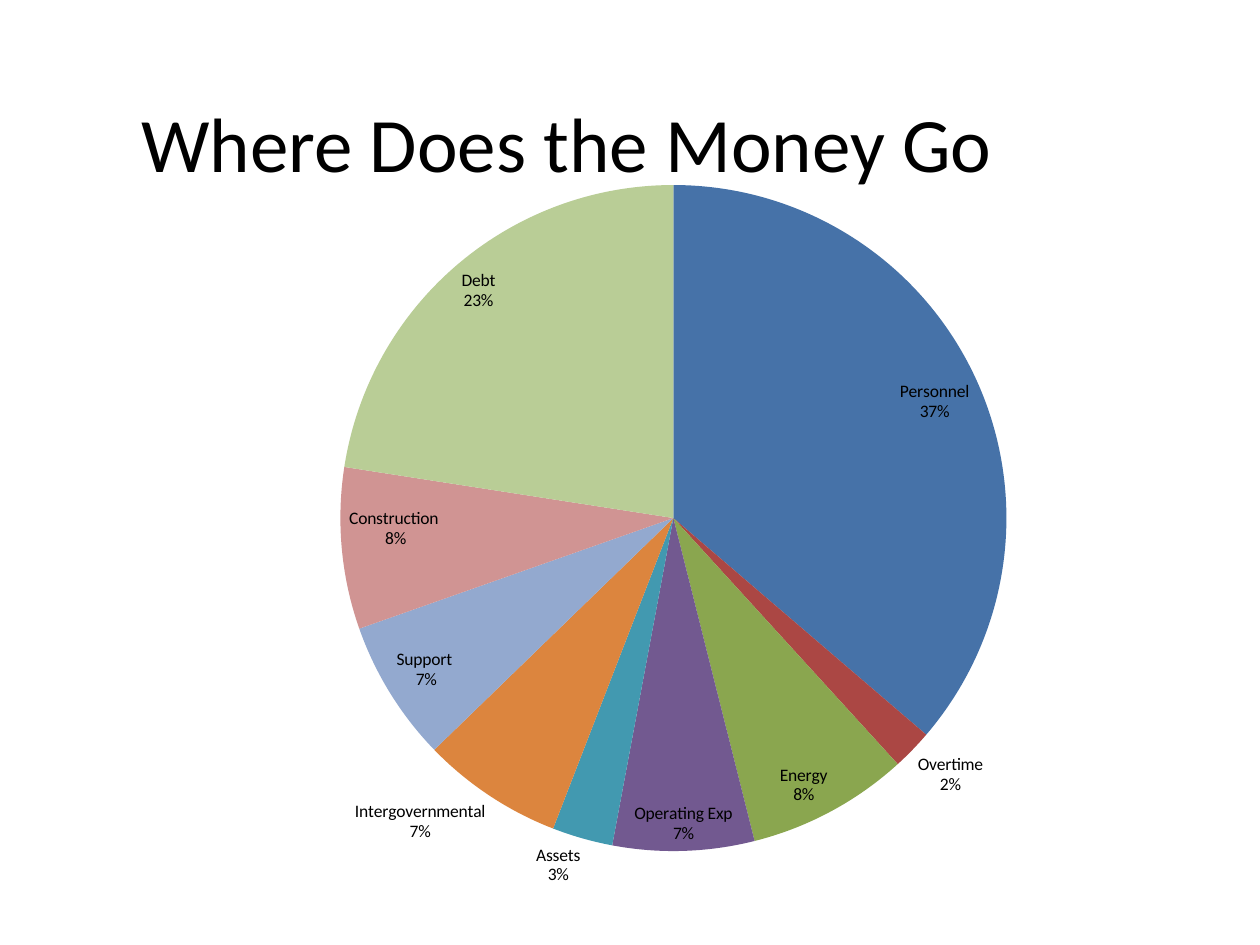
from lxml import etree
from pptx import Presentation
from pptx.chart.data import CategoryChartData
from pptx.dml.color import RGBColor
from pptx.enum import chart as charts, text
from pptx.oxml.ns import qn
from pptx.util import Inches, Pt

FONT = "Calibri"
SPENDING = [
    ("Personnel", 37, "4672A8"),
    ("Overtime", 2, "AB4744"),
    ("Energy", 8, "8AA64F"),
    ("Operating Exp", 7, "725990"),
    ("Assets", 3, "4299B0"),
    ("Intergovernmental", 7, "DC853E"),
    ("Support ", 7, "93A9CF"),
    ("Construction ", 8, "D09493"),
    ("Debt", 23, "B9CD96"),
]
OUTSIDE = ("Overtime", "Assets", "Intergovernmental")


def color(value):
    return RGBColor.from_string(value)


def set_font(font, size):
    font.name = FONT
    font.size = Pt(size)
    font.color.rgb = color("000000")


def add_title(page, box, words):
    frame = page.shapes.add_textbox(*map(Inches, box)).text_frame
    frame.word_wrap = True
    frame.vertical_anchor = text.MSO_ANCHOR.MIDDLE
    frame.text = words
    para = frame.paragraphs[0]
    para.alignment = text.PP_ALIGN.CENTER
    set_font(para.runs[0].font, 44)


def show_name_and_percent(element):
    for flag, value in (("showVal", "0"), ("showCatName", "1"), ("showPercent", "1")):
        element.find(qn(f"c:{flag}")).set("val", value)
    separator = etree.Element(qn("c:separator"))
    separator.text = "\n"
    element.find(qn("c:showBubbleSize")).addnext(separator)


def place_plot(chart, left, top, width, height):
    area = chart.plots[0]._element.getparent()
    layout = area.find(qn("c:layout"))
    if layout is None:
        layout = etree.Element(qn("c:layout"))
        area.insert(0, layout)
    manual = etree.SubElement(layout, qn("c:manualLayout"))
    settings = [("layoutTarget", "inner"), ("xMode", "edge"), ("yMode", "edge"),
                ("x", left), ("y", top), ("w", width), ("h", height)]
    for tag, value in settings:
        etree.SubElement(manual, qn(f"c:{tag}")).set("val", str(value))


def add_labels(series):
    labels = series.data_labels
    labels.position = charts.XL_LABEL_POSITION.INSIDE_END
    labels.number_format = "0%"
    labels.number_format_is_linked = False
    set_font(labels.font, 10)
    for index, (name, share, fill) in enumerate(SPENDING):
        if name in OUTSIDE:
            label = series.points[index].data_label
            set_font(label.font, 10)
            label.position = charts.XL_LABEL_POSITION.OUTSIDE_END
    name, share, fill = SPENDING[0]
    largest = series.points[0].data_label
    largest.text_frame.text = f"{name}\n{share}%"
    for para in largest.text_frame.paragraphs:
        set_font(para.runs[0].font, 10)
    largest.position = charts.XL_LABEL_POSITION.INSIDE_END
    group = labels._element
    for element in [group, *group.findall(qn("c:dLbl"))]:
        show_name_and_percent(element)


def add_spending_pie(page, box):
    data = CategoryChartData()
    data.categories = [name for name, share, fill in SPENDING]
    for title in ("Series 1", "Series 2"):
        data.add_series(title, [share for name, share, fill in SPENDING])
    chart = page.shapes.add_chart(
        charts.XL_CHART_TYPE.PIE, *map(Inches, box), data).chart
    chart.replace_data(data)
    chart.has_legend = False
    chart.has_title = False
    set_font(chart.font, 10)
    plot = chart.plots[0]
    plot.vary_by_categories = True
    for series in plot.series:
        for index, (name, share, fill) in enumerate(SPENDING):
            slice_fill = series.points[index].format.fill
            slice_fill.solid()
            slice_fill.fore_color.rgb = color(fill)
        add_labels(series)
    place_plot(chart, 0.22, 0.02, 0.63, 0.89)


def main():
    deck = Presentation()
    deck.slide_width, deck.slide_height = Inches(10), Inches(7.5)
    page = deck.slides.add_slide(deck.slide_layouts[6])
    add_title(page, (0.25, 0.5, 8.5, 1.25), "Where Does the Money Go")
    add_spending_pie(page, (0.84, 1.35, 8.42, 5.94))
    deck.save("out.pptx")


if __name__ == "__main__":
    main()
